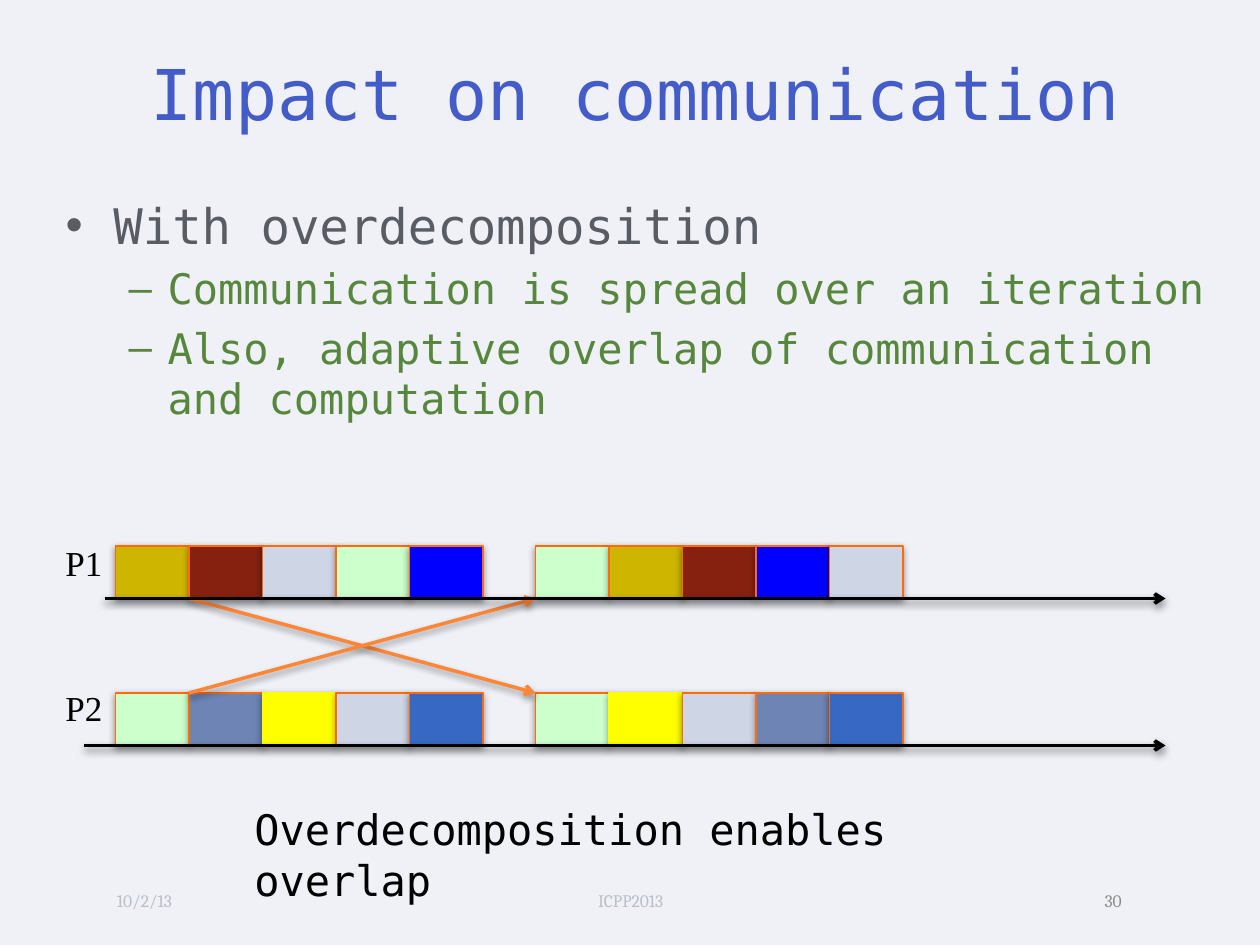
from lxml.etree import SubElement
from pptx import Presentation
from pptx.dml.color import RGBColor
from pptx.enum.shapes import MSO_CONNECTOR, MSO_SHAPE
from pptx.enum.text import MSO_ANCHOR, MSO_AUTO_SIZE, PP_ALIGN
from pptx.oxml.ns import qn
from pptx.util import Inches, Pt

MONO = "DejaVu Sans Mono"
BLACK, ORANGE, ARROW_ORANGE = "000000", "FF6B0A", "FE8637"
MINT, GOLD, BROWN, PALE, BLUE = "CCFFCC", "CEB500", "862110", "CED6E6", "0000FF"
SLATE, YELLOW, ROYAL = "6E84B4", "FFFF00", "3668C4"

# Timeline grid: blocks are 7/12 inch wide, iterations start 10/3 inches apart
BLOCK_WIDTH, BLOCK_HEIGHT = 7 / 12, 5 / 12
FIRST_LEFT, ITERATION_STEP = 11 / 12, 10 / 3
ROW_TOPS = (13 / 3, 5.5)
AXIS_LEFTS, AXIS_RIGHT = (0.83, 0.67), 9.25
LABEL_TOPS = (4.25, 5.4)
SCHEDULES = (
    ((GOLD, BROWN, PALE, MINT, BLUE), (MINT, GOLD, BROWN, BLUE, PALE)),
    ((MINT, SLATE, YELLOW, PALE, ROYAL), (MINT, YELLOW, PALE, SLATE, ROYAL)),
)


def color(value):
    return RGBColor.from_string(value)


def place(shape, left, top, width, height):
    shape.left, shape.top = Inches(left), Inches(top)
    shape.width, shape.height = Inches(width), Inches(height)


def write(paragraph, text, *, size, fill, font=MONO, align=PP_ALIGN.LEFT, before=0):
    paragraph.alignment = align
    paragraph.space_before = Pt(before)
    run = paragraph.add_run()
    run.text = text
    run.font.name, run.font.size = font, Pt(size)
    run.font.color.rgb = color(fill)


def add_shadow(shape, opacity, distance):
    properties = shape._element.spPr
    for old in properties.findall(qn("a:effectLst")):
        properties.remove(old)
    effects = SubElement(properties, qn("a:effectLst"))
    shadow = SubElement(effects, qn("a:outerShdw"), blurRad=str(Pt(4)),
                        dist=str(Pt(distance)), dir="5400000", rotWithShape="0")
    shade = SubElement(shadow, qn("a:srgbClr"), val=BLACK)
    SubElement(shade, qn("a:alpha"), val=str(opacity * 1000))


def add_text(slide, text, box, anchor=MSO_ANCHOR.TOP, **style):
    shape = slide.shapes.add_textbox(0, 0, 0, 0)
    place(shape, *box)
    frame = shape.text_frame
    frame.word_wrap = True
    frame.vertical_anchor = anchor
    write(frame.paragraphs[0], text, **style)


def add_bullet(paragraph, text, mark, level, margin, hanging, **style):
    paragraph.level = level
    properties = paragraph._p.get_or_add_pPr()
    properties.set("marL", str(Inches(margin)))
    properties.set("indent", str(Inches(-hanging)))
    SubElement(properties, qn("a:buChar"), char=mark)
    write(paragraph, text, **style)


def add_block(slide, left, top, fill):
    block = slide.shapes.add_shape(MSO_SHAPE.RECTANGLE, 0, 0, 0, 0)
    place(block, left, top, BLOCK_WIDTH, BLOCK_HEIGHT)
    block.fill.solid()
    block.fill.fore_color.rgb = color(fill)
    block.line.color.rgb = color(YELLOW if fill == YELLOW else ORANGE)
    block.line.width = Pt(1)
    add_shadow(block, 42, 1.6)


def add_arrow(slide, start, end, fill):
    points = [Inches(value) for value in (*start, *end)]
    arrow = slide.shapes.add_connector(MSO_CONNECTOR.STRAIGHT, *points)
    arrow.line.color.rgb = color(fill)
    arrow.line.width = Pt(2)
    SubElement(arrow.line._get_or_add_ln(), qn("a:tailEnd"), type="arrow")
    add_shadow(arrow, 40, 2)


def add_heading(slide):
    title, body = slide.shapes.title, slide.placeholders[1]
    place(title, 0.5, 0.3, 9.08, 0.87)
    title.text_frame.vertical_anchor = MSO_ANCHOR.MIDDLE
    write(title.text_frame.paragraphs[0], "Impact on communication",
          size=40, fill="445CC7", align=PP_ALIGN.CENTER)

    place(body, 0.42, 1.5, 9.25, 2.33)
    frame = body.text_frame
    frame.auto_size = MSO_AUTO_SIZE.NONE
    add_bullet(frame.paragraphs[0], "With overdecomposition", "•", 0, 0.38, 0.38,
               size=28, fill="595D63")
    for text in ("Communication is spread over an iteration",
                 "Also, adaptive overlap of communication and computation"):
        add_bullet(frame.add_paragraph(), text, "–", 1, 0.81, 0.31,
                   size=24, fill="57873C", before=5)


def add_footer(slide):
    for text, left, width, align, fill in (
        ("10/2/13", 0.83, 2, PP_ALIGN.LEFT, "B9BEC7"),
        ("ICPP2013", 3.42, 3.17, PP_ALIGN.CENTER, "B9BEC7"),
        ("30", 7.17, 1.83, PP_ALIGN.RIGHT, "8C8C8C"),
    ):
        add_text(slide, text, (left, 6.95, width, 0.4), MSO_ANCHOR.MIDDLE,
                 size=10, font="Cambria", fill=fill, align=align)


def add_timelines(slide):
    # Work blocks of both processors
    for top, iterations in zip(ROW_TOPS, SCHEDULES):
        for iteration, fills in enumerate(iterations):
            for column, fill in enumerate(fills):
                left = FIRST_LEFT + iteration * ITERATION_STEP + column * BLOCK_WIDTH
                add_block(slide, left, top, fill)

    # Messages from the end of the first block to the next iteration
    send, receive = FIRST_LEFT + BLOCK_WIDTH, FIRST_LEFT + ITERATION_STEP
    upper, lower = ROW_TOPS[0] + BLOCK_HEIGHT, ROW_TOPS[1]
    add_arrow(slide, (send, upper), (receive, lower), ARROW_ORANGE)
    add_arrow(slide, (send, lower), (receive, upper), ARROW_ORANGE)

    # Time axes and processor labels
    for left, top in zip(AXIS_LEFTS, ROW_TOPS):
        axis = top + BLOCK_HEIGHT
        add_arrow(slide, (left, axis), (AXIS_RIGHT, axis), BLACK)
    for number, top in enumerate(LABEL_TOPS, 1):
        add_text(slide, f"P{number}", (0.42, top, 0.58, 0.44),
                 size=20, font="Times New Roman", fill=BLACK)


def main():
    presentation = Presentation()
    presentation.slide_width, presentation.slide_height = Inches(10), Inches(7.5)
    slide = presentation.slides.add_slide(presentation.slide_layouts[1])
    slide.background.fill.solid()
    slide.background.fill.fore_color.rgb = color("EFF1F7")
    add_heading(slide)
    add_footer(slide)
    add_timelines(slide)
    add_text(slide, "Overdecomposition enables overlap", (1.92, 6.33, 6.17, 0.5),
             size=24, fill=BLACK)
    presentation.save("out.pptx")


if __name__ == "__main__":
    main()
